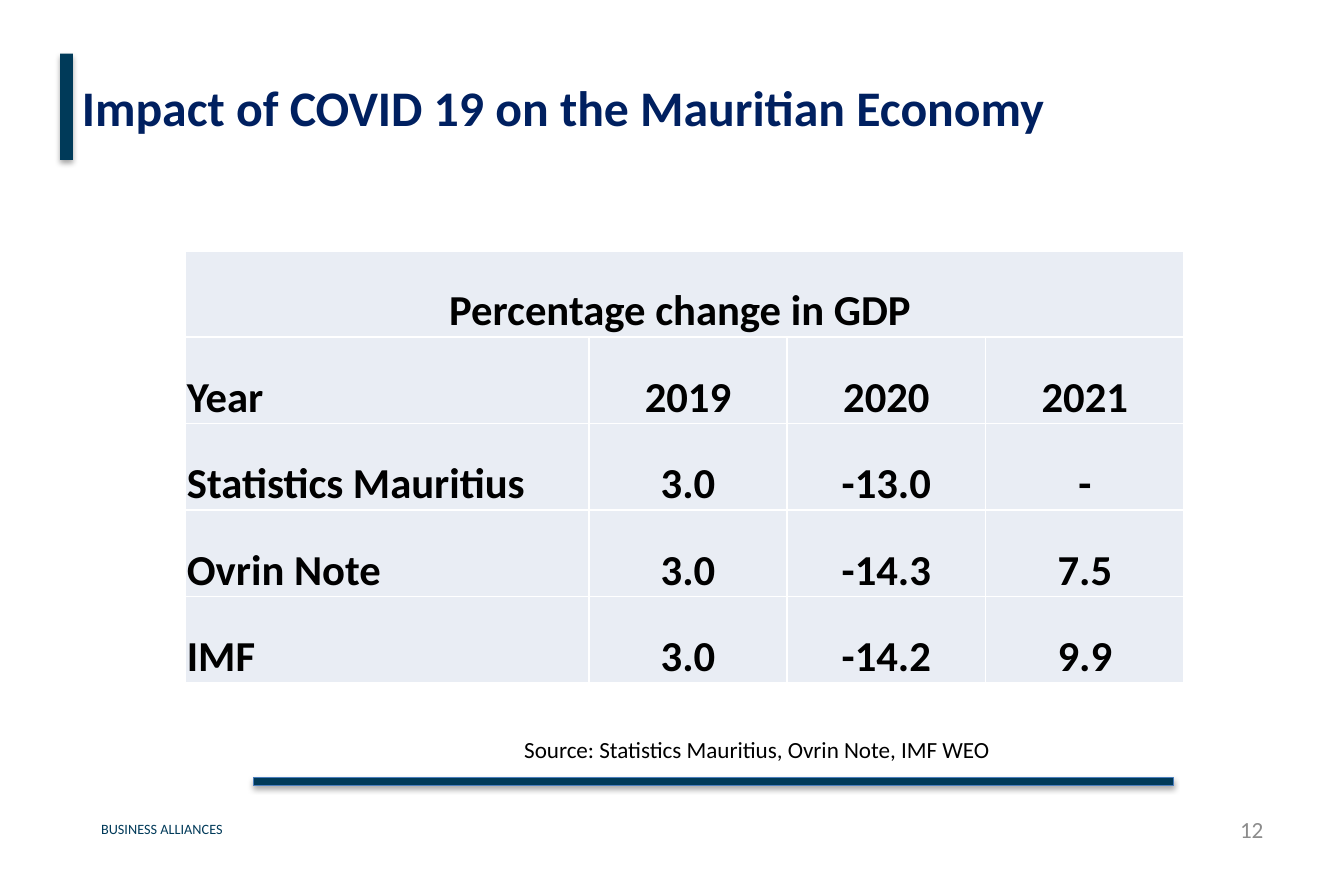
"""Build the slide on GDP change in Mauritius."""
from pptx import Presentation
from pptx import util as u
from pptx.dml.color import RGBColor
from pptx.enum import shapes, text
from pptx.oxml import parse_xml
from pptx.oxml.ns import nsdecls

NAVY = RGBColor(0x00, 0x20, 0x60)
TEAL = RGBColor(0x00, 0x3A, 0x59)
BLUE = RGBColor(0x4B, 0x7E, 0xBC)
PALE = RGBColor(0xE9, 0xED, 0xF4)
GRAY = RGBColor(0x8C, 0x8C, 0x8C)
BLACK = RGBColor(0x00, 0x00, 0x00)

LEFT, MID, RIGHT = text.PP_ALIGN.LEFT, text.PP_ALIGN.CENTER, text.PP_ALIGN.RIGHT
TOP, MIDDLE = text.MSO_ANCHOR.TOP, text.MSO_ANCHOR.MIDDLE


def write(frame, words, size, color, align=LEFT, bold=False):
    para = frame.paragraphs[0]
    para.alignment = align
    run = para.add_run()
    run.text = words
    run.font.name = "Calibri"
    run.font.size = u.Pt(size)
    run.font.bold = bold
    run.font.color.rgb = color


def pad(frame, anchor):
    frame.word_wrap = True
    frame.auto_size = text.MSO_AUTO_SIZE.NONE
    frame.vertical_anchor = anchor
    frame.margin_left = frame.margin_right = u.Inches(0.11)
    frame.margin_top = frame.margin_bottom = u.Inches(0.05)


deck = Presentation()
deck.slide_width, deck.slide_height = u.Inches(10.5), u.Inches(6.8)
slide = deck.slides.add_slide(deck.slide_layouts[5])

bars = [((0.47, 0.42, 0.1, 0.83), None), ((1.98, 6.08, 7.19, 0.06), BLUE)]
for box, edge in bars:
    bar = slide.shapes.add_shape(shapes.MSO_SHAPE.RECTANGLE, *map(u.Inches, box))
    bar.fill.solid()
    bar.fill.fore_color.rgb = TEAL
    if edge:
        bar.line.color.rgb = edge
        bar.line.width = u.Pt(0.75)
    else:
        bar.line.fill.background()
    bar.shadow.inherit = False
    glow = bar.element.spPr.find("{*}effectLst")
    glow.append(parse_xml(
        f'<a:outerShdw {nsdecls("a")} blurRad="40000" dist="23000" dir="5400000" '
        'rotWithShape="0"><a:srgbClr val="000000"><a:alpha val="35000"/>'
        '</a:srgbClr></a:outerShdw>'))

title = slide.shapes.title
title.left, title.top = u.Inches(0.53), u.Inches(0.27)
title.width, title.height = u.Inches(9.45), u.Inches(1.13)
pad(title.text_frame, MIDDLE)
write(title.text_frame, "Impact of COVID 19 on the Mauritian Economy", 28, NAVY, bold=True)

notes = [
    ((0.68, 6.36, 1.57, 0.25), "BUSINESS ALLIANCES", 8, TEAL, LEFT, TOP),
    ((3.69, 5.68, 4.48, 0.36), "Source: Statistics Mauritius, Ovrin Note, IMF WEO ",
     13, BLACK, MID, MIDDLE),
    ((7.53, 6.3, 2.45, 0.36), "12", 13, GRAY, RIGHT, MIDDLE),
]
for box, words, size, color, align, anchor in notes:
    frame = slide.shapes.add_textbox(*map(u.Inches, box)).text_frame
    pad(frame, anchor)
    write(frame, words, size, color, align)

rows = [
    ("Percentage change in GDP ", "", "", ""),
    ("Year", "2019", "2020", "2021"),
    ("Statistics Mauritius", "3.0", "-13.0", "-"),
    ("Ovrin Note", "3.0", "-14.3", "7.5"),
    ("IMF", "3.0", "-14.2", "9.9"),
]
table = slide.shapes.add_table(
    len(rows), 4, u.Inches(1.45), u.Inches(1.96), u.Inches(7.8), u.Inches(3.38)).table
for col, width in zip(table.columns, (3.15, 1.55, 1.55, 1.55)):
    col.width = u.Inches(width)
for r, row in enumerate(rows):
    for c, words in enumerate(row):
        cell = table.cell(r, c)
        props = cell._tc.get_or_add_tcPr()
        for side in "LRTB":
            props.append(parse_xml(
                f'<a:ln{side} {nsdecls("a")} w="12700"><a:solidFill>'
                f'<a:srgbClr val="FFFFFF"/></a:solidFill></a:ln{side}>'))
        cell.fill.solid()
        cell.fill.fore_color.rgb = PALE
        cell.vertical_anchor = text.MSO_ANCHOR.BOTTOM
        cell.margin_left = cell.margin_right = cell.margin_top = u.Inches(0.01)
        cell.margin_bottom = 0
        if words:
            align = LEFT if r and not c else MID
            write(cell.text_frame, words, 24, BLACK, align, True)
table.cell(0, 0).merge(table.cell(0, 3))

deck.save("out.pptx")
